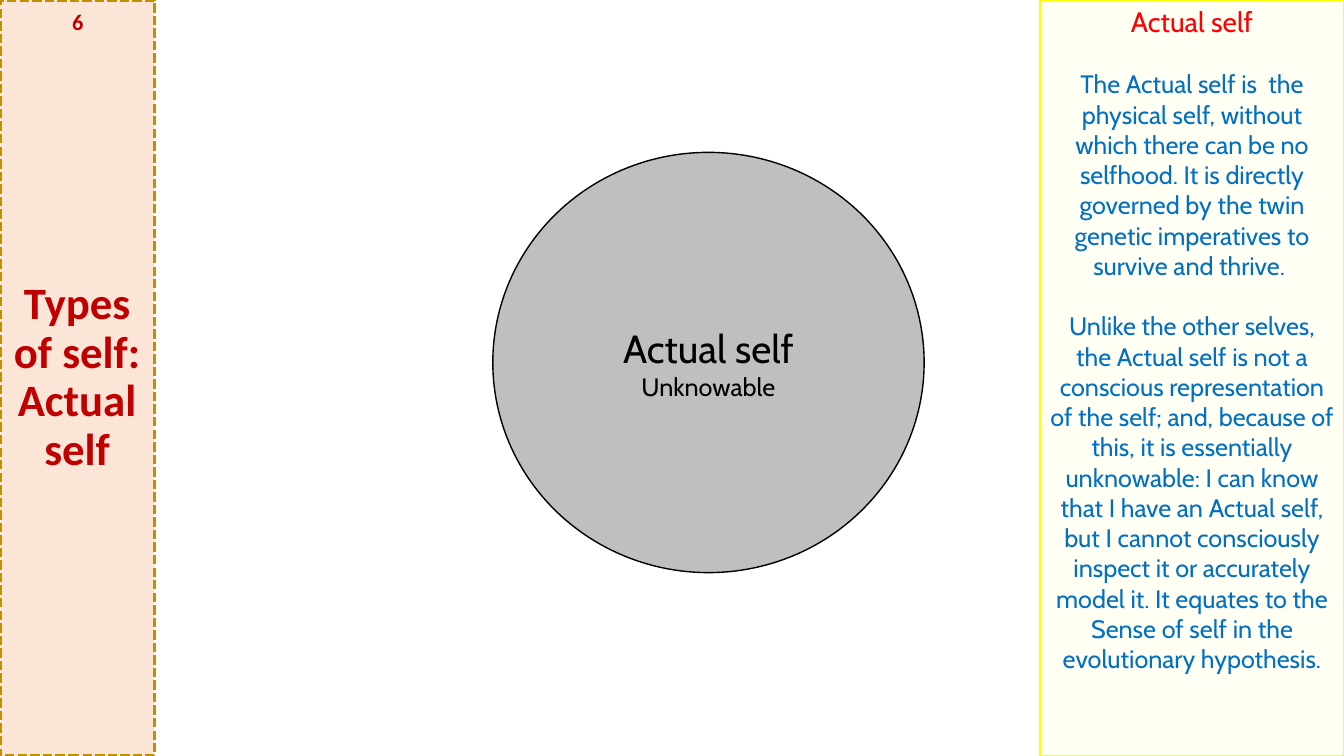
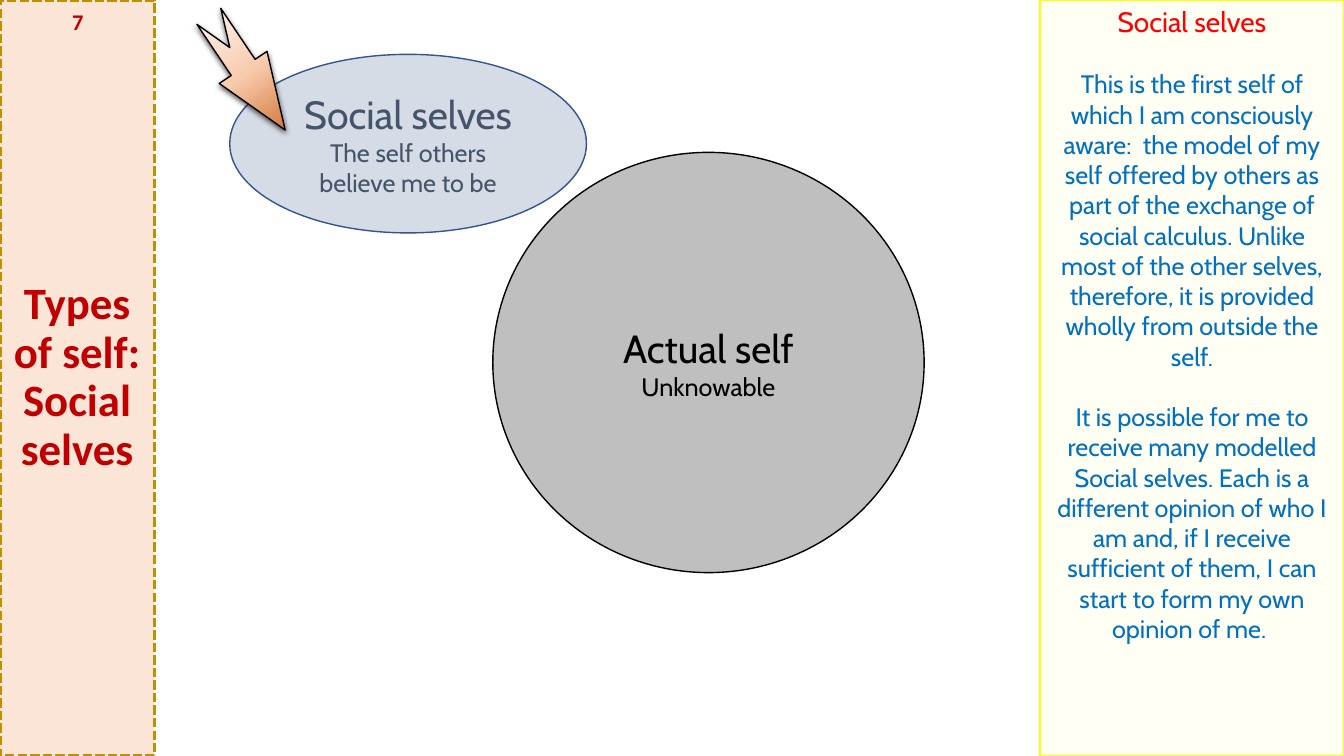
from dataclasses import dataclass
from typing import Optional

from lxml import etree
from pptx import Presentation
from pptx.dml.color import RGBColor
from pptx.enum.dml import MSO_LINE
from pptx.enum.shapes import MSO_SHAPE
from pptx.enum.text import MSO_ANCHOR, MSO_AUTO_SIZE, PP_ALIGN
from pptx.oxml import parse_xml
from pptx.oxml.ns import nsdecls, qn
from pptx.util import Cm, Pt

RECTANGLE = MSO_SHAPE.RECTANGLE
OVAL = MSO_SHAPE.OVAL
NOTCHED_ARROW = MSO_SHAPE.NOTCHED_RIGHT_ARROW
DASHED = MSO_LINE.SQUARE_DOT
CENTER = PP_ALIGN.CENTER
TOP = MSO_ANCHOR.TOP
MIDDLE = MSO_ANCHOR.MIDDLE
NO_FIT = MSO_AUTO_SIZE.NONE
TITLE_ONLY = 5

BLACK = RGBColor(0x00, 0x00, 0x00)
DARK_RED = RGBColor(0xC0, 0x00, 0x00)
RED = RGBColor(0xFF, 0x00, 0x00)
BLUE = RGBColor(0x00, 0x70, 0xC0)
SLATE = RGBColor(0x44, 0x54, 0x6A)
NAVY = RGBColor(0x32, 0x54, 0x91)
PALE_BLUE = RGBColor(0xD6, 0xDC, 0xE5)
GREY = RGBColor(0xBF, 0xBF, 0xBF)
PEACH = RGBColor(0xFB, 0xE5, 0xD6)
GOLD = RGBColor(0xBF, 0x90, 0x00)
YELLOW = RGBColor(0xFF, 0xFF, 0x00)
LIGHT_YELLOW = RGBColor(0xFF, 0xFF, 0x99)
ORANGE = RGBColor(0xC5, 0x5A, 0x11)
LIGHT_ORANGE = RGBColor(0xF8, 0xCB, 0xAD)
WHITE = RGBColor(0xFF, 0xFF, 0xFF)

HEADING_FONT = "Calibri"
BODY_FONT = "Cabin"
WIDTH, HEIGHT = Cm(33.87), Cm(19.05)
BAND_WIDTH = Cm(3.89)
PANEL_LEFT = Cm(26.21)
PANEL_GAP = Pt(21.6)


@dataclass(frozen=True)
class Box:
    left: int
    top: int
    width: int
    height: int


@dataclass(frozen=True)
class Style:
    size: int
    color: RGBColor
    font: str = BODY_FONT
    bold: bool = False


@dataclass(frozen=True)
class SelfOval:
    name: str
    caption: str
    box: Box
    fill: RGBColor
    line: RGBColor
    color: RGBColor


@dataclass(frozen=True)
class Page:
    number: int
    topic: str
    ovals: tuple[SelfOval, ...]
    notes: tuple[str, ...]
    arrow: Optional[Box] = None


TITLE_STYLE = Style(32, DARK_RED, HEADING_FONT, True)
NUMBER_STYLE = Style(16, DARK_RED, HEADING_FONT, True)
PANEL_HEADING = Style(20, RED)
PANEL_BODY = Style(18, BLUE)

BAND_BOX = Box(0, 0, BAND_WIDTH, HEIGHT)
NUMBER_BOX = Box(Cm(1.12), Cm(0.08), Cm(1.68), Cm(0.94))
PANEL_BOX = Box(PANEL_LEFT, 0, WIDTH - PANEL_LEFT, HEIGHT)

ACTUAL_SELF = SelfOval("Actual self", "Unknowable",
                       Box(Cm(12.42), Cm(3.84), Cm(10.87), Cm(10.59)),
                       GREY, BLACK, BLACK)
SOCIAL_SELVES = SelfOval("Social selves", "The self others believe me to be",
                         Box(Cm(5.79), Cm(1.37), Cm(8.99), Cm(4.5)),
                         PALE_BLUE, NAVY, SLATE)

PAGES = (
    Page(6, "Actual self", (ACTUAL_SELF,), (
        "The Actual self is  the physical self, without which there can be no "
        "selfhood. It is directly governed by the twin genetic imperatives to "
        "survive and thrive. ",
        "Unlike the other selves, the Actual self is not a conscious "
        "representation of the self; and, because of this, it is essentially "
        "unknowable: I can know that I have an Actual self, but I cannot "
        "consciously inspect it or accurately model it. It equates to the "
        "Sense of self in the evolutionary hypothesis.",
    )),
    Page(7, "Social selves", (ACTUAL_SELF, SOCIAL_SELVES), (
        "This is the first self of which I am consciously aware:  the model "
        "of my self offered by others as part of the exchange of social "
        "calculus. Unlike most of the other selves, therefore, it is provided "
        "wholly from outside the self.",
        "It is possible for me to receive many modelled Social selves. Each "
        "is a different opinion of who I am and, if I receive sufficient of "
        "them, I can start to form my own opinion of me. ",
    ), Box(Cm(4.5), Cm(1.12), Cm(3.45), Cm(1.45))),
)


def add_run(p, text: str, style: Style) -> None:
    r = p.add_run()
    r.text = text
    r.font.size = Pt(style.size)
    r.font.name = style.font
    r.font.bold = style.bold
    r.font.color.rgb = style.color


def write(tf, lines: list[tuple[str, Style]], anchor=TOP, gap: int = 0) -> None:
    tf.word_wrap = True
    tf.vertical_anchor = anchor
    for i, (text, style) in enumerate(lines):
        p = tf.paragraphs[0] if i == 0 else tf.add_paragraph()
        p.alignment = CENTER
        if gap and i < len(lines) - 1:
            p.space_after = gap
        add_run(p, text, style)


def paint(sp, fill: RGBColor, line: RGBColor, weight: float = 1) -> None:
    sp.fill.solid()
    sp.fill.fore_color.rgb = fill
    sp.line.color.rgb = line
    sp.line.width = Pt(weight)


def add_shape(s, kind, box: Box, fill: RGBColor, line: RGBColor):
    sp = s.shapes.add_shape(kind, box.left, box.top, box.width, box.height)
    paint(sp, fill, line)
    sp.shadow.inherit = False
    return sp


def add_title_band(s, topic: str) -> None:
    sp = s.shapes.title
    sp.left, sp.top = BAND_BOX.left, BAND_BOX.top
    sp.width, sp.height = BAND_BOX.width, BAND_BOX.height
    paint(sp, PEACH, GOLD, 2.25)
    sp.line.dash_style = DASHED
    tf = sp.text_frame
    tf.auto_size = NO_FIT
    write(tf, [("Types of self:", TITLE_STYLE)], MIDDLE)
    p = tf.paragraphs[0]
    p.line_spacing = 0.9
    p.add_line_break()
    add_run(p, topic, TITLE_STYLE)


def add_oval(s, oval: SelfOval) -> None:
    sp = add_shape(s, OVAL, oval.box, oval.fill, oval.line)
    write(sp.text_frame, [(oval.name, Style(28, oval.color)),
                          (oval.caption, Style(18, oval.color))], MIDDLE)


def add_arrow(s, box: Box) -> None:
    sp = add_shape(s, NOTCHED_ARROW, box, LIGHT_ORANGE, BLACK)
    sp.adjustments[0] = 0.5
    sp.adjustments[1] = 1.31
    sp.rotation = 56.1
    stops = "".join(
        f'<a:gs pos="{pos}"><a:srgbClr val="{color}"/></a:gs>'
        for pos, color in ((0, ORANGE), (50000, LIGHT_ORANGE), (100000, WHITE)))
    spPr = sp._element.spPr
    spPr.replace(spPr.find(qn("a:solidFill")), parse_xml(
        f'<a:gradFill {nsdecls("a")} rotWithShape="1"><a:gsLst>{stops}</a:gsLst>'
        '<a:lin ang="10800000" scaled="0"/></a:gradFill>'))
    spPr.find(qn("a:effectLst")).append(parse_xml(
        f'<a:outerShdw {nsdecls("a")} blurRad="{Pt(4)}" dist="{Pt(1.5)}" '
        f'dir="5400000" rotWithShape="0"><a:srgbClr val="{BLACK}">'
        '<a:alpha val="63000"/></a:srgbClr></a:outerShdw>'))


def add_panel(s, page: Page) -> None:
    sp = add_shape(s, RECTANGLE, PANEL_BOX, LIGHT_YELLOW, YELLOW)
    color = sp._element.spPr.find(qn("a:solidFill")).find(qn("a:srgbClr"))
    etree.SubElement(color, qn("a:alpha")).set("val", "10000")
    lines = [(page.topic, PANEL_HEADING)]
    lines += [(note, PANEL_BODY) for note in page.notes]
    write(sp.text_frame, lines, gap=PANEL_GAP)


def add_number(s, number: int) -> None:
    box = NUMBER_BOX
    sp = s.shapes.add_textbox(box.left, box.top, box.width, box.height)
    write(sp.text_frame, [(str(number), NUMBER_STYLE)])


def add_page(prs, page: Page) -> None:
    s = prs.slides.add_slide(prs.slide_layouts[TITLE_ONLY])
    add_title_band(s, page.topic)
    for oval in page.ovals:
        add_oval(s, oval)
    if page.arrow:
        add_arrow(s, page.arrow)
    add_panel(s, page)
    add_number(s, page.number)


def main() -> None:
    prs = Presentation()
    prs.slide_width, prs.slide_height = WIDTH, HEIGHT
    for page in PAGES:
        add_page(prs, page)
    prs.save("out.pptx")


if __name__ == "__main__":
    main()
